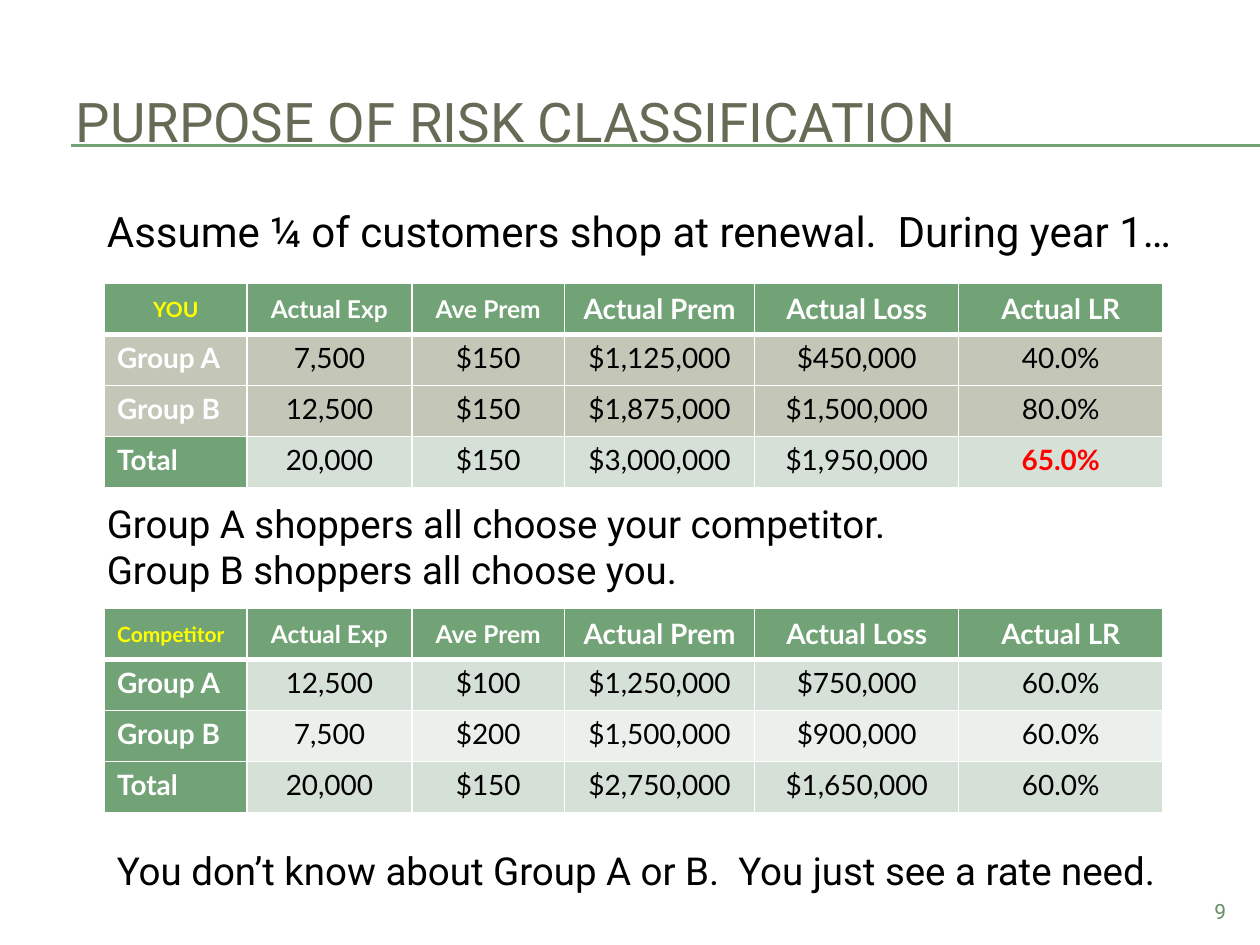
from lxml.etree import SubElement
from pptx import Presentation
from pptx.dml.color import RGBColor
from pptx.enum.shapes import MSO_CONNECTOR
from pptx.enum.text import MSO_ANCHOR as Anchor, MSO_AUTO_SIZE, PP_ALIGN as Align
from pptx.oxml.ns import qn
from pptx.util import Inches, Pt

COLORS = {
    "green": "72A376", "pale": "D5E0D6", "paler": "EBF0EC", "taupe": "C4C6B8",
    "olive": "676A55", "number": "659068", "black": "000000", "white": "FFFFFF",
    "yellow": "FFFF00", "red": "FF0000",
}

TITLE = "PURPOSE OF RISK CLASSIFICATION"
# left, top, width, height, size, paragraphs
STATEMENTS = [
    (0.75, 1.58, 8.92, 0.5, 24,
     ["Assume ¼ of customers shop at renewal.  During year 1…"]),
    (0.75, 3.92, 8.67, 0.84, 22,
     ["Group A shoppers all choose your competitor.",
      "Group B shoppers all choose you."]),
    (0.83, 6.67, 9, 0.47, 22,
     ["You don’t know about Group A or B.  You just see a rate need."]),
]
SLIDE_NUMBER = "9"

HEADINGS = ["Actual Exp", "Ave Prem", "Actual Prem", "Actual Loss", "Actual LR"]
HEADING_SIZES = [12, 14, 14, 16, 16, 16]
COLUMN_WIDTHS = [1.13, 1.31, 1.21, 1.51, 1.62, 1.62]
ROW_HEIGHT = 0.405
TABLE_LEFT = 0.83

# Each row: label, label fill, value fill, values
INSURERS = [
    {"name": "YOU", "align": Align.CENTER, "top": 2.25, "alert": "65.0%", "rows": [
        ("Group A", "taupe", "taupe",
         ["7,500", "$150", "$1,125,000", "$450,000", "40.0%"]),
        ("Group B", "taupe", "taupe",
         ["12,500", "$150", "$1,875,000", "$1,500,000", "80.0%"]),
        ("Total", "green", "pale",
         ["20,000", "$150", "$3,000,000", "$1,950,000", "65.0%"]),
    ]},
    {"name": "Competitor", "align": Align.LEFT, "top": 4.83, "alert": None, "rows": [
        ("Group A", "green", "pale",
         ["12,500", "$100", "$1,250,000", "$750,000", "60.0%"]),
        ("Group B", "green", "paler",
         ["7,500", "$200", "$1,500,000", "$900,000", "60.0%"]),
        ("Total", "green", "pale",
         ["20,000", "$150", "$2,750,000", "$1,650,000", "60.0%"]),
    ]},
]


def rgb(name):
    return RGBColor.from_string(COLORS[name])


def write(frame, paragraphs, size, color="black", font="Roboto", bold=False,
          align=Align.LEFT):
    for index, words in enumerate(paragraphs):
        paragraph = frame.paragraphs[0] if index == 0 else frame.add_paragraph()
        paragraph.alignment = align
        run = paragraph.add_run()
        run.text = words
        run.font.size = Pt(size)
        run.font.name = font
        run.font.bold = bold
        run.font.color.rgb = rgb(color)


def add_statement(slide, left, top, width, height, size, paragraphs, **style):
    box = slide.shapes.add_textbox(*map(Inches, (left, top, width, height)))
    box.text_frame.word_wrap = True
    write(box.text_frame, paragraphs, size, **style)


def add_rule(slide, y):
    rule = slide.shapes.add_connector(
        MSO_CONNECTOR.STRAIGHT, Inches(0.56), Inches(y), Inches(10), Inches(y))
    rule.line.color.rgb = rgb("green")
    rule.line.width = Pt(0.75)
    SubElement(rule._element.spPr, qn("a:effectLst"))


def set_borders(cell, top, bottom):
    """White borders: 1 pt at the sides, the given widths above and below."""
    properties = cell._tc.get_or_add_tcPr()
    for index, (side, width) in enumerate(
            [("lnL", 1), ("lnR", 1), ("lnT", top), ("lnB", bottom)]):
        border = properties.makeelement(qn(f"a:{side}"), {"w": str(Pt(width))})
        fill = SubElement(border, qn("a:solidFill"))
        SubElement(fill, qn("a:srgbClr"), val=COLORS["white"])
        properties.insert(index, border)


def fill_cell(cell, words, fill, size=16, anchor=Anchor.TOP, top=1, bottom=1, **style):
    cell.fill.solid()
    cell.fill.fore_color.rgb = rgb(fill)
    cell.vertical_anchor = anchor
    set_borders(cell, top, bottom)
    write(cell.text_frame, [words], size, font="Lato", **style)


def add_insurer_table(slide, insurer):
    rows = insurer["rows"]
    table = slide.shapes.add_table(
        len(rows) + 1, len(COLUMN_WIDTHS), Inches(TABLE_LEFT), Inches(insurer["top"]),
        Inches(sum(COLUMN_WIDTHS)), Inches(ROW_HEIGHT * (len(rows) + 1))).table
    table.first_col = True
    for column, width in zip(table.columns, COLUMN_WIDTHS):
        column.width = Inches(width)
    for row in table.rows:
        row.height = Inches(ROW_HEIGHT)

    for c, heading in enumerate([insurer["name"]] + HEADINGS):
        fill_cell(table.cell(0, c), heading, "green", size=HEADING_SIZES[c],
                  anchor=Anchor.MIDDLE, bottom=3, bold=True,
                  color="white" if c else "yellow",
                  align=Align.CENTER if c else insurer["align"])
    for r, (label, label_fill, value_fill, values) in enumerate(rows, 1):
        top = 3 if r == 1 else 1
        fill_cell(table.cell(r, 0), label, label_fill, top=top, color="white", bold=True)
        for c, value in enumerate(values, 1):
            alert = value == insurer["alert"]
            fill_cell(table.cell(r, c), value, value_fill, top=top, bold=alert,
                      color="red" if alert else "black", align=Align.CENTER)


def main():
    deck = Presentation()
    deck.slide_width, deck.slide_height = Inches(10), Inches(7.5)
    slide = deck.slides.add_slide(deck.slide_layouts[5])

    title = slide.shapes.title
    title.left, title.top, title.width, title.height = map(Inches, (0.5, 0.5, 9.5, 0.92))
    title.text_frame.auto_size = MSO_AUTO_SIZE.NONE
    title.text_frame.vertical_anchor = Anchor.MIDDLE
    write(title.text_frame, [TITLE], 31.2, color="olive")

    for y in (1.15, 1.16):
        add_rule(slide, y)
    for statement in STATEMENTS:
        add_statement(slide, *statement)
    for insurer in INSURERS:
        add_insurer_table(slide, insurer)
    add_statement(slide, 9, 7.08, 0.83, 0.27, 12, [SLIDE_NUMBER],
                  color="number", align=Align.RIGHT)
    deck.save("out.pptx")


if __name__ == "__main__":
    main()
